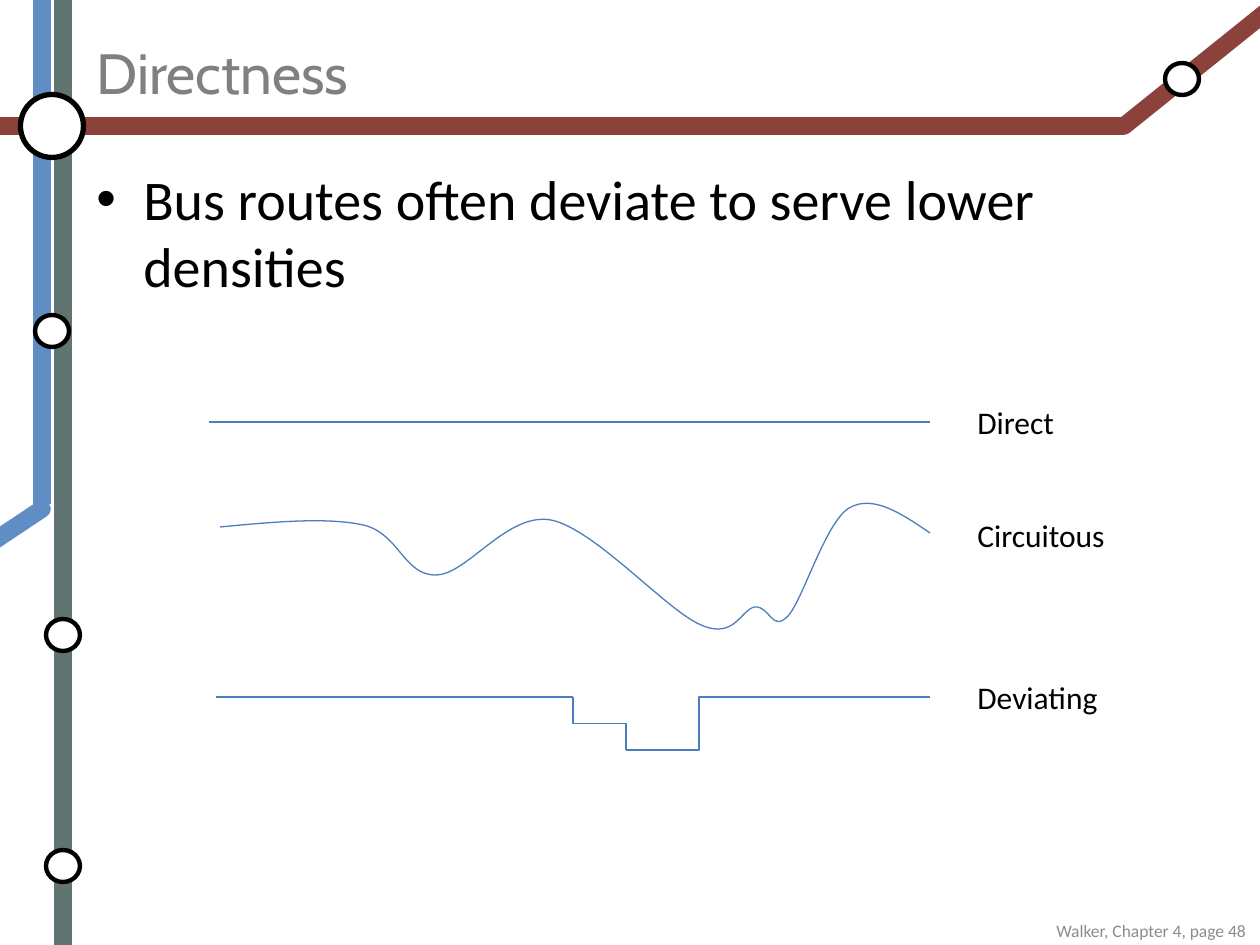
from lxml.etree import SubElement
from pptx import Presentation
from pptx.dml.color import RGBColor
from pptx.enum.shapes import MSO_CONNECTOR as Link, MSO_SHAPE as Shape
from pptx.enum.text import MSO_ANCHOR as Anchor, PP_ALIGN as Align
from pptx.oxml.ns import qn
from pptx.util import Emu, Pt

SCALE = 914400 / 126
GREEN = RGBColor(0x60, 0x74, 0x72)
BLUE = RGBColor(0x60, 0x8D, 0xC4)
RED = RGBColor(0x8A, 0x42, 0x3A)
ROUTE = RGBColor(0x4B, 0x7E, 0xBC)
GRAY = RGBColor(0x80, 0x80, 0x80)
PALE = RGBColor(0x8C, 0x8C, 0x8C)
BLACK = RGBColor(0, 0, 0)
WHITE = RGBColor(255, 255, 255)

TRACKS = [
    ((63, 945), (63, 0), GREEN, False),
    ((42, 504), (42, 0), BLUE, False),
    ((42, 509), (-21, 551), BLUE, True),
    ((0, 126), (1124, 126), RED, False),
    ((1281, 0), (1124, 126), RED, True),
]
STATIONS = [
    (52, 126, 63, 63, 3),
    (63, 635, 34, 32, 2.5),
    (63, 866, 34, 32, 2.5),
    (52, 331, 34, 32, 2.5),
    (1182, 79, 34, 32, 2.5),
]
STRAIGHT_ROUTES = [
    ((209, 422), (930, 422)),
    ((216, 697), (573, 697)),
    ((772, 697), (930, 697)),
]
CIRCUITOUS = [
    (220, 527),
    (273, 522), (326, 517), (363, 525),
    (399, 533), (404, 576), (436, 575),
    (467, 575), (507, 512), (551, 520),
    (595, 529), (667, 611), (701, 625),
    (735, 640), (741, 609), (755, 607),
    (770, 606), (772, 633), (788, 616),
    (803, 600), (825, 523), (849, 508),
    (873, 494), (902, 514), (930, 533),
]
TITLE = "Directness"
BULLET = "Bus routes often deviate to serve lower densities"
LABELS = [("Direct", 397, 103), ("Circuitous", 510, 154), ("Deviating", 672, 147)]
SOURCE = "Walker, Chapter 4, page 48"


def px(value):
    return Emu(round(value * SCALE))


def add_line(page, start, end, color, width, kind=Link.STRAIGHT):
    line = page.shapes.add_connector(kind, *map(px, start + end))
    line.line.color.rgb = color
    line.line.width = Pt(width)
    SubElement(line._element.spPr, qn("a:effectLst"))
    return line


def add_station(page, x, y, width, height, border):
    station = page.shapes.add_shape(
        Shape.OVAL, px(x - width / 2), px(y - height / 2), px(width), px(height))
    station.shadow.inherit = False
    station.fill.solid()
    station.fill.fore_color.rgb = WHITE
    station.line.color.rgb = BLACK
    station.line.width = Pt(border)


def add_text(page, text, area, size, color, font="Calibri", wrap=True):
    box = page.shapes.add_textbox(*map(px, area))
    frame = box.text_frame
    frame.text = text
    frame.word_wrap = wrap
    span = frame.paragraphs[0].runs[0]
    span.font.name = font
    span.font.size = Pt(size)
    span.font.color.rgb = color
    return frame


def add_curve(page, points):
    builder = page.shapes.build_freeform(*points[0], scale=SCALE)
    builder.add_line_segments(points[1:], close=False)
    curve = builder.convert_to_shape()
    curve.shadow.inherit = False
    curve.fill.background()
    curve.line.color.rgb = ROUTE
    curve.line.width = Pt(0.75)
    outline = curve._element.spPr.find(".//" + qn("a:path"))
    steps = outline.findall(qn("a:lnTo"))
    for first in range(0, len(steps), 3):
        bend = SubElement(outline, qn("a:cubicBezTo"))
        for step in steps[first:first + 3]:
            bend.append(step[0])
            outline.remove(step)


def main():
    deck = Presentation()
    deck.slide_width, deck.slide_height = px(1260), px(945)
    page = deck.slides.add_slide(deck.slide_layouts[6])

    for start, end, color, rounded in TRACKS:
        track = add_line(page, start, end, color, 10)
        if rounded:
            track.line._get_or_add_ln().set("cap", "rnd")
    for station in STATIONS:
        add_station(page, *station)

    title = add_text(page, TITLE, (84, 38, 1040, 67), 32.4, GRAY, "Cabin")
    title.vertical_anchor = Anchor.MIDDLE
    body = add_text(page, BULLET, (84, 158, 1134, 222), 32, BLACK)
    props = body.paragraphs[0]._p.get_or_add_pPr()
    props.set("marL", str(px(47)))
    props.set("indent", str(px(-47)))
    SubElement(props, qn("a:buFont")).set("typeface", "Arial")
    SubElement(props, qn("a:buChar")).set("char", "•")

    for start, end in STRAIGHT_ROUTES:
        add_line(page, start, end, ROUTE, 0.75)
    add_curve(page, CIRCUITOUS)
    step_down = add_line(page, (573, 697), (626, 750), ROUTE, 0.75, Link.ELBOW)
    turn = step_down._element.spPr.find(qn("a:xfrm"))
    turn.set("rot", "16200000")
    turn.set("flipH", "1")
    add_line(page, (626, 750), (772, 697), ROUTE, 0.75, Link.ELBOW)

    for text, top, width in LABELS:
        add_text(page, text, (965, top, width, 51), 18, BLACK, wrap=False)
    source = add_text(page, SOURCE, (775, 914, 483, 41), 10, PALE)
    source.paragraphs[0].alignment = Align.RIGHT

    deck.save("out.pptx")


if __name__ == "__main__":
    main()
